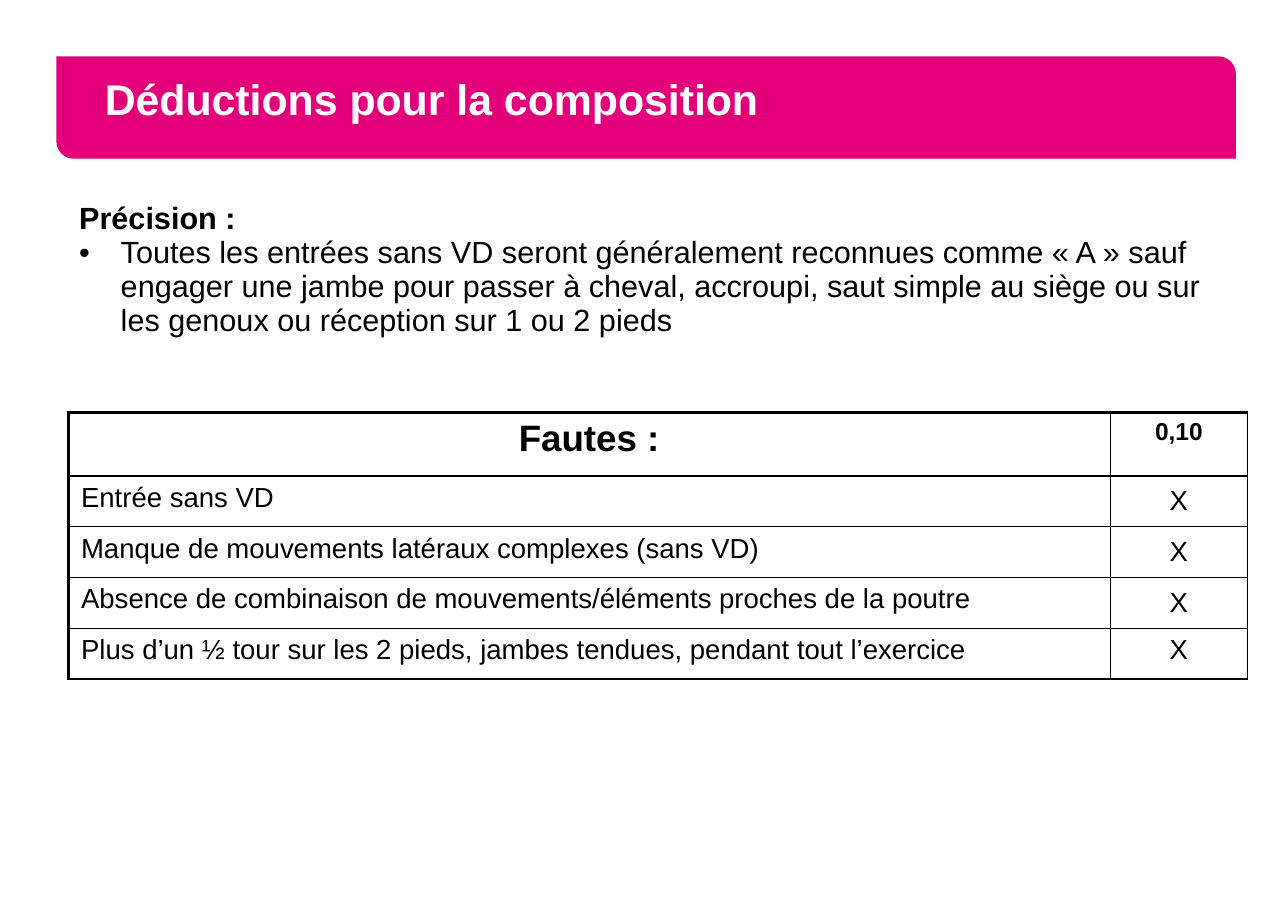
from dataclasses import dataclass

from lxml.etree import SubElement
from pptx import Presentation
from pptx.dml.color import RGBColor
from pptx.enum.shapes import MSO_SHAPE as Preset
from pptx.enum.text import MSO_ANCHOR as Anchor, PP_ALIGN as Align
from pptx.oxml.ns import qn
from pptx.util import Cm, Pt


@dataclass(frozen=True)
class Theme:
    font: str = "Arial"
    magenta: str = "E2007A"
    white: str = "FFFFFF"
    black: str = "000000"
    title: int = 28
    heading: int = 24
    note: int = 20
    body: int = 18
    value: int = 16
    thick: float = 2.25
    thin: float = 1


THEME = Theme()

TITLE = "Déductions pour la composition"
NOTE_HEADING = "Précision :"
NOTE = (
    "Toutes les entrées sans VD seront généralement reconnues comme « A » sauf "
    "engager une jambe pour passer à cheval, accroupi, saut simple au siège ou sur "
    "les genoux ou réception sur 1 ou 2 pieds"
)
FAULTS = [
    "Entrée sans VD",
    "Manque de mouvements latéraux complexes (sans VD)",
    "Absence de combinaison de mouvements/éléments proches de la poutre",
    "Plus d’un ½ tour sur les 2 pieds, jambes tendues, pendant tout l’exercice",
]


def add_text(paragraph, text, size, bold=False, color=THEME.black, align=Align.LEFT):
    paragraph.alignment = align
    run = paragraph.add_run()
    run.text = text
    run.font.name = THEME.font
    run.font.size = Pt(size)
    run.font.bold = bold
    run.font.color.rgb = RGBColor.from_string(color)


def set_margins(box, side, end):
    box.margin_left = box.margin_right = Cm(side)
    box.margin_top = box.margin_bottom = Cm(end)


def set_bullet(paragraph, indent):
    props = paragraph._p.get_or_add_pPr()
    props.set("marL", str(indent))
    props.set("indent", str(-indent))
    SubElement(props, qn("a:buFont"), typeface=THEME.font)
    SubElement(props, qn("a:buChar"), char="•")


def set_borders(cell, left, top):
    props = cell._tc.get_or_add_tcPr()
    widths = {"lnL": left, "lnR": THEME.thin, "lnT": top, "lnB": THEME.thin}
    for side, width in widths.items():
        line = SubElement(props, qn(f"a:{side}"), w=str(Pt(width)))
        fill = SubElement(line, qn("a:solidFill"))
        SubElement(fill, qn("a:srgbClr"), val=THEME.black)


def add_grid(slide, left, top, widths, heights):
    frame = slide.shapes.add_table(
        len(heights), len(widths), Cm(left), Cm(top), Cm(sum(widths)), Cm(sum(heights))
    )
    grid = frame.table
    grid.first_row = grid.horz_banding = False
    for column, width in zip(grid.columns, widths):
        column.width = Cm(width)
    for row, height in zip(grid.rows, heights):
        row.height = Cm(height)
    return grid


def add_banner(slide):
    banner = slide.shapes.add_shape(
        Preset.ROUND_2_DIAG_RECTANGLE, Cm(1.3), Cm(1.3), Cm(27.2), Cm(2.36)
    )
    # Round only the top right and bottom left corners
    banner.adjustments[0], banner.adjustments[1] = 0, 0.17
    banner.shadow.inherit = False
    banner.fill.solid()
    banner.fill.fore_color.rgb = RGBColor.from_string(THEME.magenta)
    banner.line.fill.background()
    frame = banner.text_frame
    frame.word_wrap = True
    frame.vertical_anchor = Anchor.MIDDLE
    set_margins(frame, 1, 0.13)
    title = frame.paragraphs[0]
    title.line_spacing = Pt(22)
    add_text(title, TITLE, THEME.title, bold=True, color=THEME.white)


def add_note(slide):
    cell = add_grid(slide, 1.57, 4.52, [27.2], [4.55]).cell(0, 0)
    cell.fill.background()
    frame = cell.text_frame
    add_text(frame.paragraphs[0], NOTE_HEADING, THEME.note, bold=True)
    detail = frame.add_paragraph()
    set_bullet(detail, Cm(0.96))
    add_text(detail, NOTE, THEME.note)


def add_faults(slide):
    heights = [1.47] + [1.17] * len(FAULTS)
    grid = add_grid(slide, 1.57, 9.5, [24.03, 3.17], heights)

    # Frame: heavy left and top edges, fine lines elsewhere
    for r in range(len(heights)):
        for c in range(2):
            cell = grid.cell(r, c)
            set_margins(cell, 0.3, 0.15)
            set_borders(
                cell,
                left=THEME.thin if c else THEME.thick,
                top=THEME.thin if r else THEME.thick,
            )
            cell.fill.background()

    # Header
    headings = [("Fautes :", THEME.heading), ("0,10", THEME.value)]
    for c, (heading, size) in enumerate(headings):
        paragraph = grid.cell(0, c).text_frame.paragraphs[0]
        add_text(paragraph, heading, size, bold=True, align=Align.CENTER)

    # Faults and their deduction marks; the last mark sits at the top
    for r, fault in enumerate(FAULTS, start=1):
        add_text(grid.cell(r, 0).text_frame.paragraphs[0], fault, THEME.body)
        mark = grid.cell(r, 1)
        mark.vertical_anchor = Anchor.TOP if r == len(FAULTS) else Anchor.MIDDLE
        add_text(mark.text_frame.paragraphs[0], "X", THEME.body, align=Align.CENTER)


def main():
    deck = Presentation()
    deck.slide_width, deck.slide_height = Cm(29.7), Cm(21)
    slide = deck.slides.add_slide(deck.slide_layouts[6])
    add_banner(slide)
    add_faults(slide)
    add_note(slide)
    deck.save("out.pptx")


if __name__ == "__main__":
    main()
